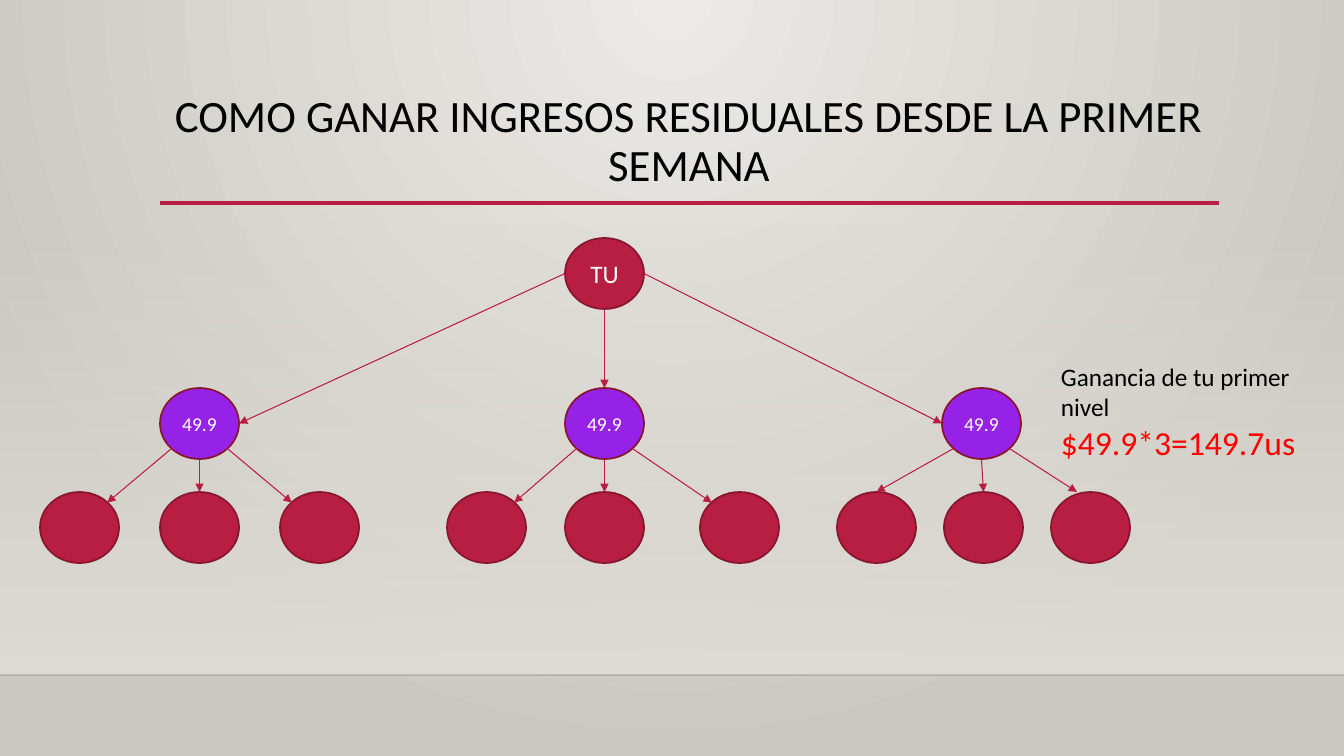
from pptx import Presentation, util as u
from pptx.dml.color import RGBColor
from pptx.enum import shapes, text
from pptx.oxml import parse_xml
from pptx.oxml.ns import qn
from lxml import etree

TITLE = "COMO GANAR INGRESOS RESIDUALES DESDE LA PRIMER SEMANA"
ROOT = ("TU", 565, 238)
PRICE = "49.9"
ROWS = {"parent": 388, "child": 492}
# Parent x, child x positions, and where each arrow meets its child
TEAMS = [
    (160, (40, 160, 280), ("ne", "n", "nw")),
    (565, (447, 565, 700), ("ne", "n", "nw")),
    (942, (837, 944, 1051), ("n", "n", "third")),
]
NOTE = [("Ganancia de tu primer nivel", "ink", "body"),
        ("$49.9*3=149.7us", "gain", "sum")]

THEME = {
    "font": "Calibri",
    "color": {"ink": "000000", "light": "FFFFFF", "gain": "FF0000",
              "main": "B71E42", "edge": "871631", "level": "9622E7",
              "glow": "ECEAE7", "shade": "CAC7C1", "wall": "DFDBD5",
              "floor": "000001"},
    "size": {"title": 32, "sum": 24, "body": 18, "price": 14},
}
COLOR = THEME["color"]
SIZE = THEME["size"]

WIDE, HIGH = 1344, 756
NODE_W, NODE_H = 79, 71
PORTS = {"n": (.5, 0), "s": (.5, 1), "w": (0, .5), "e": (1, .5),
         "nw": (.15, .15), "ne": (.85, .15), "sw": (.15, .85),
         "se": (.85, .85), "third": (.33, 0)}
NS = ('xmlns:a="http://schemas.openxmlformats.org/drawingml/2006/main" '
      'xmlns:p="http://schemas.openxmlformats.org/presentationml/2006/main"')


def px(n):
    return round(n * 914400 / 100.8)


def rgb(name):
    return RGBColor.from_string(COLOR[name])


def style(para, color, size, align=None):
    para.alignment = align
    for run in para.runs:
        run.font.name = THEME["font"]
        run.font.size = u.Pt(SIZE[size])
        run.font.color.rgb = rgb(color)


def backdrop(slide):
    """Radial page gradient, then the wall fading in down to the floor."""
    slide.element.cSld.insert(0, parse_xml(
        f'<p:bg {NS}><p:bgPr><a:gradFill rotWithShape="1"><a:gsLst>'
        f'<a:gs pos="0"><a:srgbClr val="{COLOR["glow"]}"/></a:gs>'
        f'<a:gs pos="100000"><a:srgbClr val="{COLOR["shade"]}"/></a:gs>'
        '</a:gsLst><a:path path="circle">'
        '<a:fillToRect l="43000" t="0" r="43000" b="100000"/></a:path>'
        '</a:gradFill><a:effectLst/></p:bgPr></p:bg>'))
    wall = slide.shapes.add_shape(shapes.MSO_SHAPE.RECTANGLE,
                                  0, px(223), px(WIDE), px(452))
    wall.shadow.inherit = False
    wall.line.fill.background()
    wall.fill.gradient()
    wall.fill.gradient_angle = 270
    for stop, place in zip(wall.fill.gradient_stops, (0, 1)):
        stop.position = place
        stop.color.rgb = rgb("wall")
    clear = wall.element.spPr.find(".//" + qn("a:srgbClr"))
    etree.SubElement(clear, qn("a:alpha")).set("val", "0")


def link(slide, start, end, color="main", width=.75, arrow=True):
    line = slide.shapes.add_connector(
        shapes.MSO_CONNECTOR.STRAIGHT, *map(px, start + end))
    line.line.color.rgb = rgb(color)
    line.line.width = u.Pt(width)
    if arrow:
        tail = etree.SubElement(line.line._get_or_add_ln(), qn("a:tailEnd"))
        tail.set("type", "triangle")
    etree.SubElement(line.element.spPr, qn("a:effectLst"))
    return line


def node(slide, x, y, fill="main", label="", size="body"):
    oval = slide.shapes.add_shape(shapes.MSO_SHAPE.OVAL, px(x), px(y),
                                  px(NODE_W), px(NODE_H))
    oval.shadow.inherit = False
    oval.fill.solid()
    oval.fill.fore_color.rgb = rgb(fill)
    oval.line.color.rgb = rgb("edge")
    oval.line.width = u.Pt(1.25)
    if label:
        frame = oval.text_frame
        frame.text = label
        frame.vertical_anchor = text.MSO_ANCHOR.MIDDLE
        style(frame.paragraphs[0], "light", size, text.PP_ALIGN.CENTER)


def port(x, y, name):
    across, down = PORTS[name]
    return x + across * NODE_W, y + down * NODE_H


def box(slide, x, y, w, h):
    frame = slide.shapes.add_textbox(px(x), px(y), px(w), px(h)).text_frame
    frame.word_wrap = True
    return frame


def tree(slide):
    label, root_x, root_y = ROOT
    upper, lower = ROWS["parent"], ROWS["child"]
    node(slide, root_x, root_y, label=label)
    for (x, kids, ends), out, into in zip(TEAMS, "wse", "enw"):
        node(slide, x, upper, "level", PRICE, "price")
        link(slide, port(root_x, root_y, out), port(x, upper, into))
        for kid, leave, end in zip(kids, ("sw", "s", "se"), ends):
            node(slide, kid, lower)
            link(slide, port(x, upper, leave), port(kid, lower, end))


def main():
    deck = Presentation()
    deck.slide_width, deck.slide_height = px(WIDE), px(HIGH)
    slide = deck.slides.add_slide(deck.slide_layouts[6])
    backdrop(slide)
    floor = link(slide, (0, 675), (WIDE, 675), "floor", 1, False)
    tint = floor.element.spPr.find(".//" + qn("a:srgbClr"))
    etree.SubElement(tint, qn("a:alpha")).set("val", "20000")
    link(slide, (160, 203), (1219, 203), width=2.5, arrow=False)

    head = box(slide, 160, 89, 1058, 116)
    head.text = TITLE
    head.paragraphs[0].line_spacing = .9
    style(head.paragraphs[0], "ink", "title", text.PP_ALIGN.CENTER)

    tree(slide)

    note = box(slide, 1051, 356, 268, 112)
    note.text = "\n".join(words for words, _, _ in NOTE)
    for para, (_, color, size) in zip(note.paragraphs, NOTE):
        style(para, color, size)
    deck.save("out.pptx")


if __name__ == "__main__":
    main()
